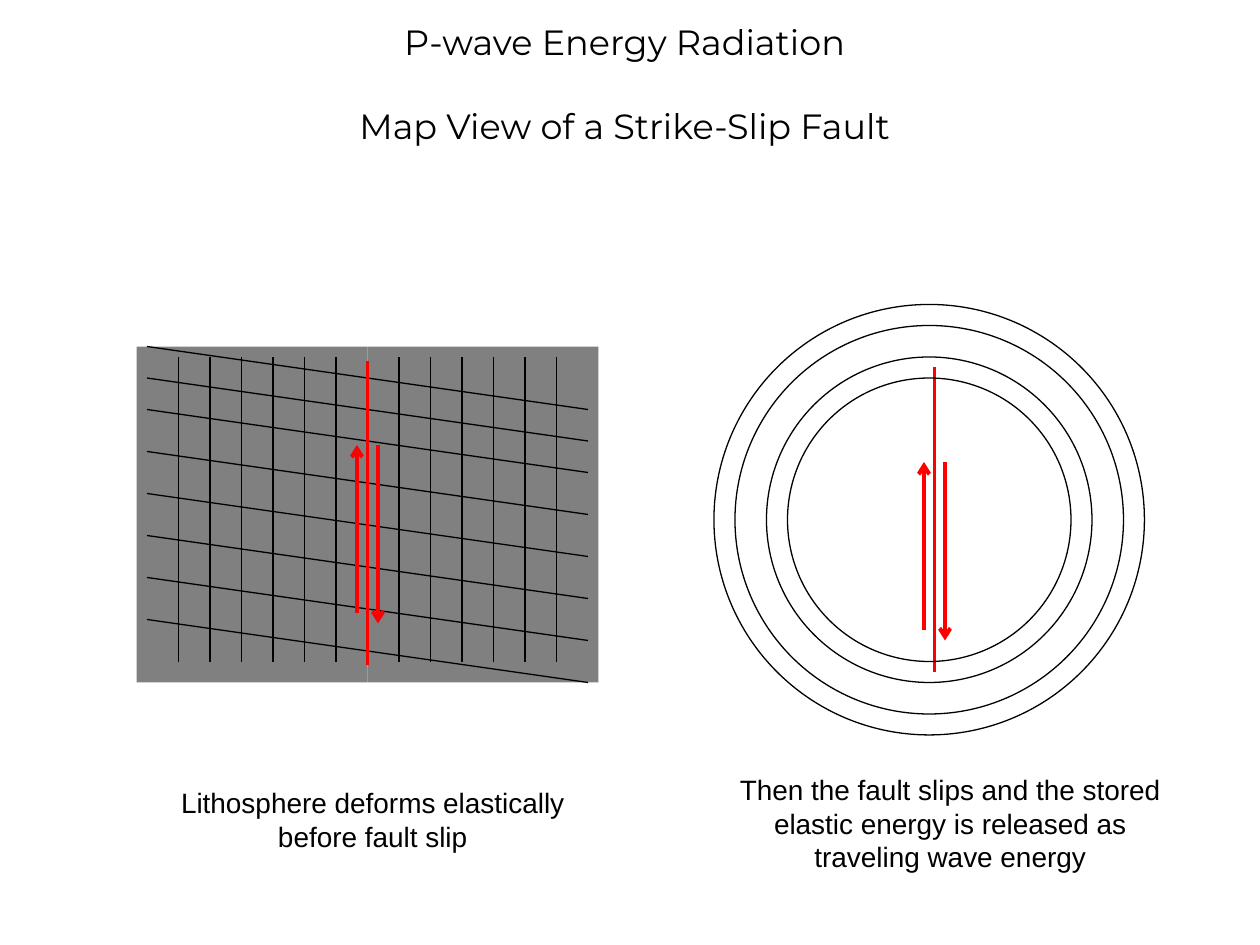
from lxml import etree
from pptx import Presentation
from pptx.dml.color import RGBColor
from pptx.enum.shapes import MSO_CONNECTOR, MSO_SHAPE
from pptx.enum.text import MSO_ANCHOR, PP_ALIGN
from pptx.oxml.ns import qn
from pptx.util import Pt

EMU_PER_PX = 9525
STRAIGHT = MSO_CONNECTOR.STRAIGHT
RECTANGLE = MSO_SHAPE.RECTANGLE
OVAL = MSO_SHAPE.OVAL
MIDDLE = MSO_ANCHOR.MIDDLE
TOP = MSO_ANCHOR.TOP
CENTER = PP_ALIGN.CENTER

BLACK = "000000"
RED = "FF0000"
GRAY = "808080"


def px(length):
    return int(length * EMU_PER_PX)


def color(value):
    return RGBColor.from_string(value)


def add_text(page, left, top, width, height, lines, font, size, anchor=TOP):
    box = page.shapes.add_textbox(px(left), px(top), px(width), px(height))
    frame = box.text_frame
    frame.word_wrap = True
    frame.vertical_anchor = anchor
    for index, line in enumerate(lines):
        para = frame.add_paragraph() if index else frame.paragraphs[0]
        para.text = line
        para.alignment = CENTER
        para.font.name = font
        para.font.size = Pt(size)
        para.font.color.rgb = color(BLACK)
        if index:
            para.space_before = Pt(24)


def add_line(page, x1, y1, x2, y2, stroke=BLACK, weight=0.75, arrow=False):
    line = page.shapes.add_connector(STRAIGHT, px(x1), px(y1), px(x2), px(y2))
    line.line.color.rgb = color(stroke)
    line.line.width = Pt(weight)
    if arrow:
        etree.SubElement(line.line._get_or_add_ln(), qn("a:tailEnd"), type="arrow")
    etree.SubElement(line._element.spPr, qn("a:effectLst"))


def add_block(page, left, top, width, height):
    block = page.shapes.add_shape(RECTANGLE, px(left), px(top), px(width), px(height))
    block.shadow.inherit = False
    block.fill.solid()
    block.fill.fore_color.rgb = color(GRAY)
    block.line.fill.background()


def add_wavefront(page, center_x, center_y, radius):
    ring = page.shapes.add_shape(
        OVAL, px(center_x - radius), px(center_y - radius), px(2 * radius), px(2 * radius)
    )
    ring.shadow.inherit = False
    ring.fill.background()
    ring.line.color.rgb = color(BLACK)
    ring.line.width = Pt(0.75)


def add_fault(page, x, fault_top, slip_top):
    add_line(page, x, fault_top, x, fault_top + 232, RED, 2.25)
    add_line(page, x - 8, slip_top + 128, x - 8, slip_top, RED, 2.25, True)
    add_line(page, x + 8, slip_top, x + 8, slip_top + 136, RED, 2.25, True)


def add_deformed_lithosphere(page):
    fault_x = 280
    for left in (104, fault_x):
        add_block(page, left, 264, 176, 256)
    for y in (264, 288, *range(312, 473, 32)):
        add_line(page, 112, y, 448, y + 48)
    add_fault(page, fault_x, 275, 339)
    for x in range(136, 425, 24):
        if x != fault_x:
            add_line(page, x, 272, x, 504)


def add_wave_release(page):
    add_fault(page, 712, 280, 352)
    for radius in (108, 124, 148, 164):
        add_wavefront(page, 708, 396, radius)


def main():
    deck = Presentation()
    deck.slide_width = px(960)
    deck.slide_height = px(720)
    page = deck.slides.add_slide(deck.slide_layouts[6])

    add_text(page, 240, 16, 472, 96,
             ["P-wave Energy Radiation", "Map View of a Strike-Slip Fault"],
             "Montserrat", 20, MIDDLE)
    add_deformed_lithosphere(page)
    add_wave_release(page)
    add_text(page, 112, 594, 344, 61,
             ["Lithosphere deforms elastically before fault slip"], "Arial", 16)
    add_text(page, 552, 584, 344, 87,
             ["Then the fault slips and the stored elastic energy is released "
              "as traveling wave energy"], "Arial", 16)

    deck.save("out.pptx")


if __name__ == "__main__":
    main()
